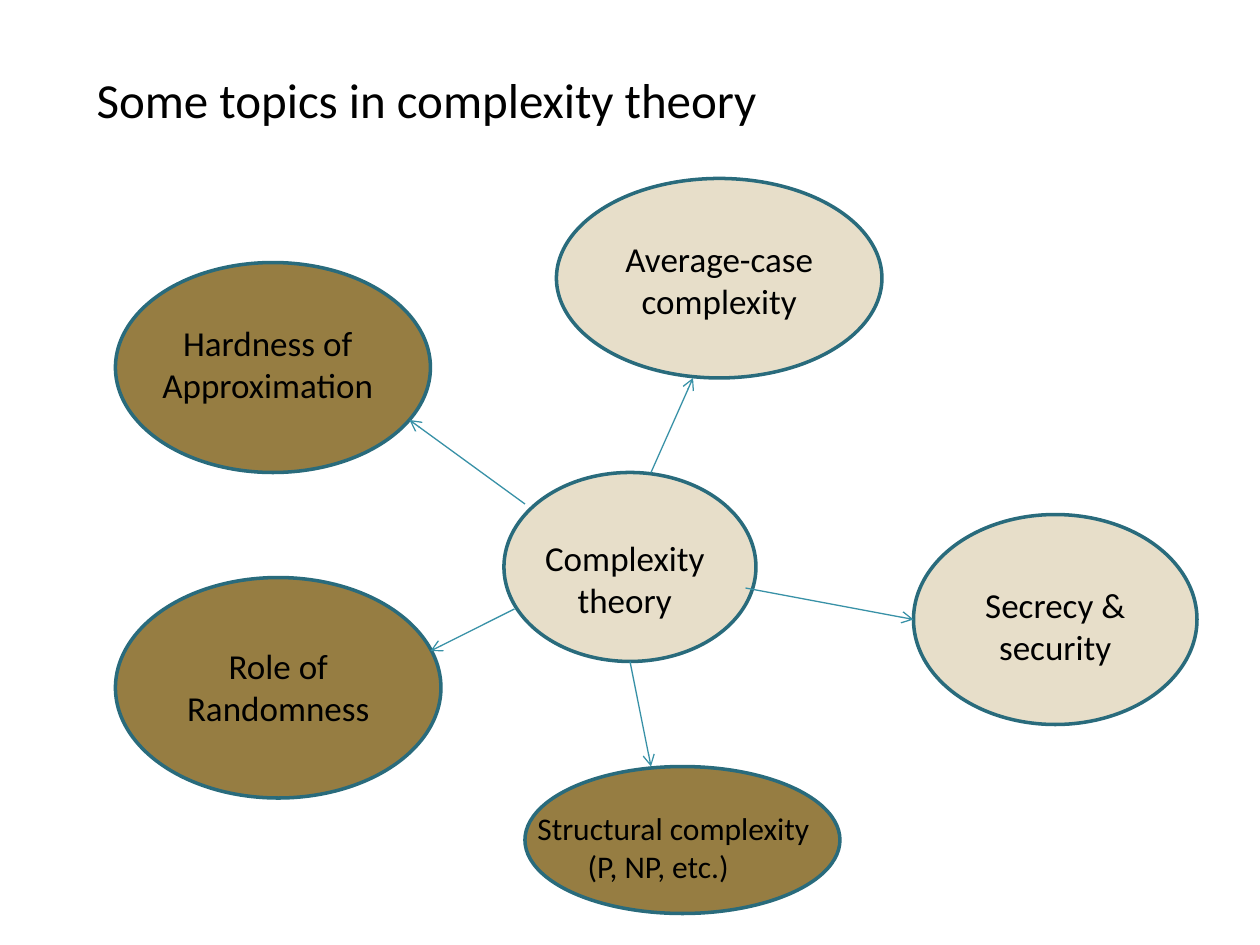
from lxml.etree import SubElement
from pptx import Presentation
from pptx.dml.color import RGBColor
from pptx.enum.shapes import MSO_CONNECTOR as Connector, MSO_SHAPE as Shape
from pptx.enum.text import MSO_ANCHOR as Anchor, PP_ALIGN as Align
from pptx.oxml.ns import qn
from pptx.util import Inches, Pt

BLACK = RGBColor(0x00, 0x00, 0x00)
CREAM = RGBColor(0xE7, 0xDE, 0xC9)
BRONZE = RGBColor(0x96, 0x7D, 0x42)
OUTLINE = RGBColor(0x29, 0x6B, 0x7C)
ARROW = RGBColor(0x38, 0x91, 0xA7)

FONT = "Calibri"
CELLS_PER_INCH = 12
LABEL_ROWS = 9.25
LIST_INDENT = Inches(0.4)

# fmt: off
TOPICS = [
    ("Complexity theory", CREAM, (48, 45, 24, 18), (49, 50.5, 21)),
    ("Role of Randomness", BRONZE, (11, 55, 31, 21), (13, 60.75, 27)),
    ("Hardness of Approximation", BRONZE, (11, 25, 30, 20), (13, 30, 25)),
    ("Secrecy & security", CREAM, (87, 49, 27, 20), (88, 55, 25)),
    ("Average-case complexity", CREAM, (53, 17, 31, 19), (55, 22, 27)),
]
ARROWS = [
    ((60, 63), (62, 73)),
    ((49, 58), (41, 62)),
    ((50, 48), (39, 40)),
    ((62, 45), (66, 36)),
    ((71, 56), (87, 59)),
]


def cells(*counts):
    return [Inches(count / CELLS_PER_INCH) for count in counts]


def write_lines(box, lines, size, align=Align.LEFT):
    frame = box.text_frame
    frame.word_wrap = True
    frame.vertical_anchor = Anchor.TOP
    frame.text = "\n".join(lines)
    for para in frame.paragraphs:
        para.alignment = align
        para.font.name = FONT
        para.font.size = Pt(size)
        para.font.color.rgb = BLACK
    return frame.paragraphs


def add_title(page, text):
    title = page.shapes.title
    title.left, title.top, title.width, title.height = cells(8, 6, 68, 7)
    write_lines(title, [text], 28)


def add_ellipse(page, color, area):
    ellipse = page.shapes.add_shape(Shape.OVAL, *cells(*area))
    ellipse.shadow.inherit = False
    ellipse.fill.solid()
    ellipse.fill.fore_color.rgb = color
    ellipse.line.color.rgb = OUTLINE
    ellipse.line.width = Pt(2)


def add_label(page, lines, place, size=20, align=Align.CENTER):
    box = page.shapes.add_textbox(*cells(*place, LABEL_ROWS))
    return write_lines(box, lines, size, align)


def add_structural_topic(page):
    add_ellipse(page, BRONZE, (50, 73, 30, 14))
    lines = ["Structural complexity", "(P, NP, etc.)"]
    examples = add_label(page, lines, (50, 76.5, 31), 18, Align.LEFT)[1]
    examples._p.get_or_add_pPr().set("marL", str(LIST_INDENT))


def add_arrow(page, start, end):
    arrow = page.shapes.add_connector(Connector.STRAIGHT, *cells(*start, *end))
    arrow.line.color.rgb = ARROW
    arrow.line.width = Pt(0.75)
    SubElement(arrow.line._get_or_add_ln(), qn("a:tailEnd"), type="arrow")
    SubElement(arrow._element.spPr, qn("a:effectLst"))


def main():
    deck = Presentation()
    deck.slide_width, deck.slide_height = cells(120, 90)
    page = deck.slides.add_slide(deck.slide_layouts[5])
    add_title(page, "Some topics in complexity theory")
    for text, color, area, place in TOPICS:
        add_ellipse(page, color, area)
        add_label(page, [text], place)
    add_structural_topic(page)
    for start, end in ARROWS:
        add_arrow(page, start, end)
    deck.save("out.pptx")


if __name__ == "__main__":
    main()
